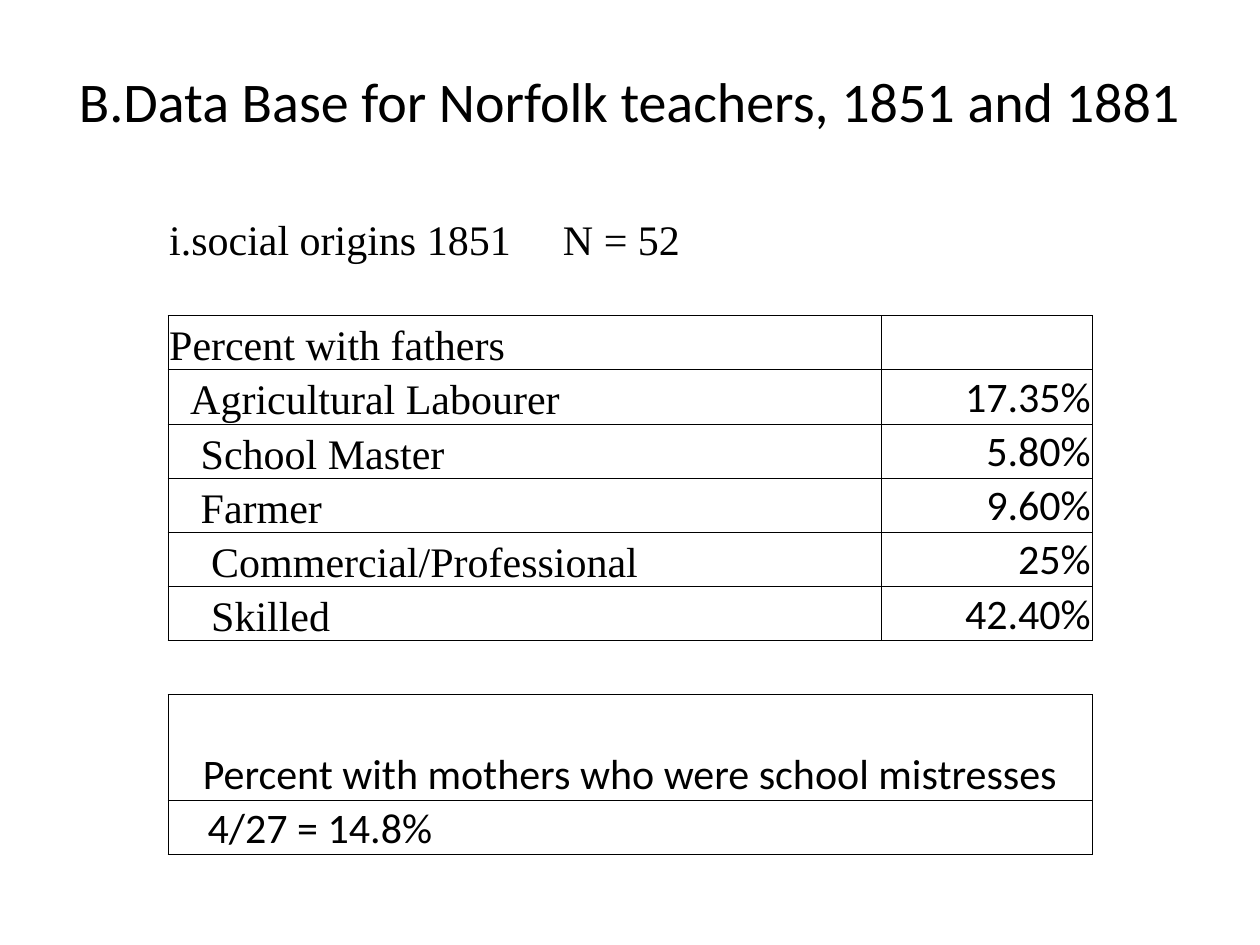
from lxml import etree
from pptx import Presentation
from pptx.dml.color import RGBColor
from pptx.enum.text import MSO_ANCHOR, PP_ALIGN
from pptx.oxml.ns import qn
from pptx.util import Pt

LEFT, CENTER, RIGHT = PP_ALIGN.LEFT, PP_ALIGN.CENTER, PP_ALIGN.RIGHT
BOTTOM, MIDDLE = MSO_ANCHOR.BOTTOM, MSO_ANCHOR.MIDDLE
TITLE_ONLY = 5

COLORS = {"ink": "000000"}
SANS, SERIF = "Calibri", "Times New Roman"
SIDES = "LRTB"

COLUMN_WIDTHS = [407.5, 120.5]
LINE_HEIGHT, GAP_HEIGHT, MOTHERS_HEIGHT = 30.95, 29.5, 60.6
ROW_HEIGHTS = [LINE_HEIGHT, GAP_HEIGHT] + [LINE_HEIGHT] * 7 + [MOTHERS_HEIGHT, LINE_HEIGHT]
HEADING_ROW, FATHERS_ROW, MOTHERS_ROW, RATIO_ROW = 0, 2, 9, 10
SIDES_BY_ROW = {0: "", 1: "B", 8: "TB"}
FATHERS = [
    ("Agricultural Labourer", 12, "17.35%"),
    ("School Master", 18, "5.80%"),
    ("Farmer", 18, "9.60%"),
    ("Commercial/Professional", 24, "25%"),
    ("Skilled", 24, "42.40%"),
]


def add_run(paragraph, text, size, face):
    run = paragraph.add_run()
    run.text = text
    run.font.size = Pt(size)
    run.font.name = face
    run.font.color.rgb = RGBColor.from_string(COLORS["ink"])


def set_title(slide, text):
    title = slide.shapes.title
    title.left, title.top, title.width, title.height = Pt(36), Pt(12), Pt(648), Pt(90)
    title.text_frame.vertical_anchor = MIDDLE
    paragraph = title.text_frame.paragraphs[0]
    paragraph.alignment = CENTER
    add_run(paragraph, text, 32, SANS)


def set_borders(cell, ruled_sides):
    properties = cell._tc.get_or_add_tcPr()
    for side in SIDES:
        border = etree.SubElement(properties, qn(f"a:ln{side}"), w=str(Pt(0.5)))
        if side in ruled_sides:
            fill = etree.SubElement(border, qn("a:solidFill"))
            etree.SubElement(fill, qn("a:srgbClr"), val=COLORS["ink"])
        else:
            etree.SubElement(border, qn("a:noFill"))


def add_grid(slide):
    frame = slide.shapes.add_table(
        len(ROW_HEIGHTS), len(COLUMN_WIDTHS),
        Pt(96), Pt(120), Pt(sum(COLUMN_WIDTHS)), Pt(sum(ROW_HEIGHTS)))
    grid = frame.table
    grid.first_row = grid.horz_banding = False
    for column, width in zip(grid.columns, COLUMN_WIDTHS):
        column.width = Pt(width)
    for index, (row, height) in enumerate(zip(grid.rows, ROW_HEIGHTS)):
        row.height = Pt(height)
        for cell in row.cells:
            set_borders(cell, SIDES_BY_ROW.get(index, SIDES))
            cell.fill.background()
            cell.margin_left = cell.margin_right = cell.margin_top = Pt(0.7)
            cell.margin_bottom = Pt(0)
            cell.vertical_anchor = BOTTOM
    for index in (MOTHERS_ROW, RATIO_ROW):
        grid.cell(index, 0).merge(grid.cell(index, 1))
    return grid


def write_cell(cell, text, face, align=LEFT, indent=0):
    cell.margin_left = Pt(0.7 + indent)
    paragraph = cell.text_frame.paragraphs[0]
    paragraph.alignment = align
    add_run(paragraph, text, 24, face)
    return paragraph


def add_tab_stop(paragraph, position):
    stops = etree.SubElement(paragraph._p.get_or_add_pPr(), qn("a:tabLst"))
    etree.SubElement(stops, qn("a:tab"), pos=str(Pt(position)), algn="l")


def main():
    deck = Presentation()
    deck.slide_width, deck.slide_height = Pt(720), Pt(540)
    slide = deck.slides.add_slide(deck.slide_layouts[TITLE_ONLY])
    set_title(slide, "B.Data Base for Norfolk teachers, 1851 and 1881")

    grid = add_grid(slide)
    heading = write_cell(grid.cell(HEADING_ROW, 0), "i.social origins 1851\tN = 52", SERIF)
    add_tab_stop(heading, 225)
    write_cell(grid.cell(FATHERS_ROW, 0), "Percent with fathers", SERIF)
    for index, (occupation, indent, share) in enumerate(FATHERS, FATHERS_ROW + 1):
        write_cell(grid.cell(index, 0), occupation, SERIF, indent=indent)
        write_cell(grid.cell(index, 1), share, SANS, RIGHT)
    write_cell(grid.cell(MOTHERS_ROW, 0),
               "Percent with mothers who were school mistresses", SANS, CENTER)
    write_cell(grid.cell(RATIO_ROW, 0), "4/27 = 14.8%", SANS, indent=22)

    deck.save("out.pptx")


if __name__ == "__main__":
    main()
